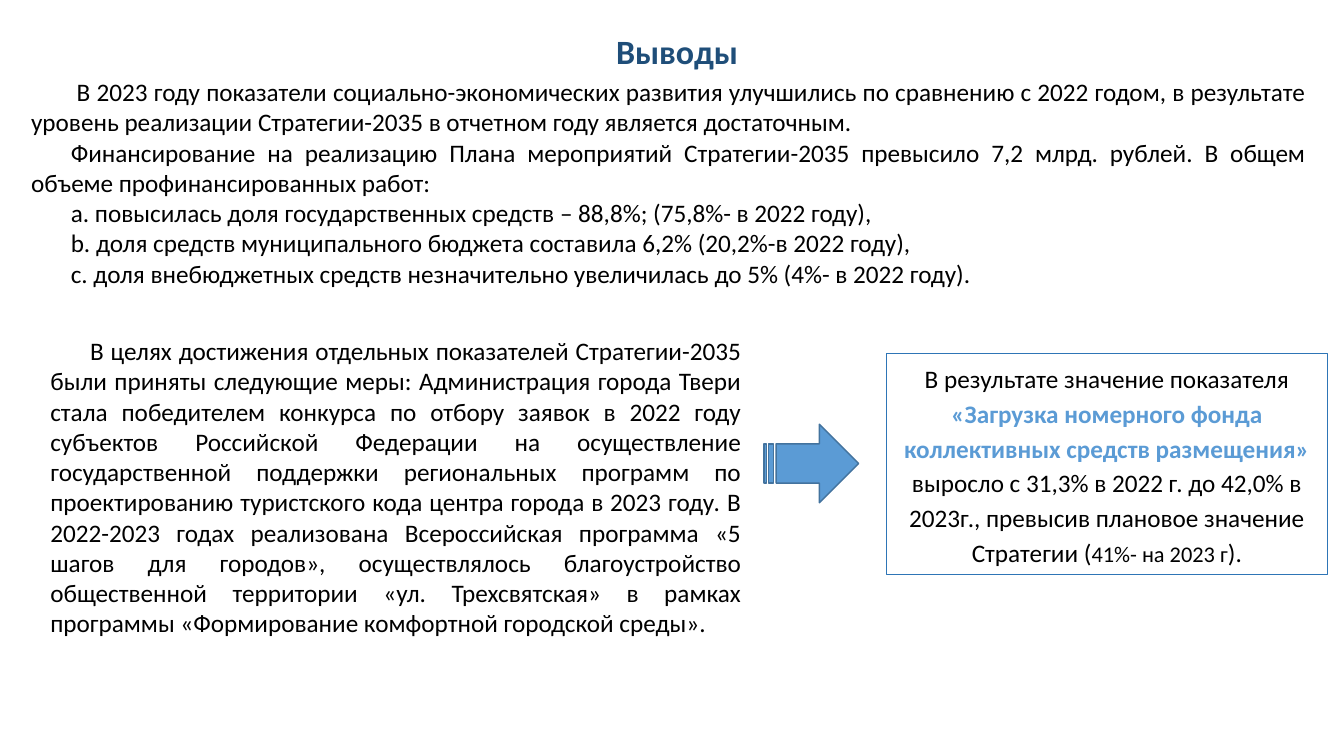
from lxml import etree
from pptx import Presentation
from pptx.dml.color import RGBColor
from pptx.enum.shapes import MSO_SHAPE
from pptx.enum.text import MSO_ANCHOR, MSO_AUTO_SIZE, PP_ALIGN
from pptx.oxml.ns import qn
from pptx.util import Cm, Pt

RECTANGLE = MSO_SHAPE.RECTANGLE
STRIPED_ARROW = MSO_SHAPE.STRIPED_RIGHT_ARROW
TOP, BOTTOM = MSO_ANCHOR.TOP, MSO_ANCHOR.BOTTOM
CENTER, JUSTIFY = PP_ALIGN.CENTER, PP_ALIGN.JUSTIFY
NO_AUTOFIT = MSO_AUTO_SIZE.NONE

COLORS = {
    "text": "000000",
    "heading": "1F4E79",
    "accent": "5B9BD5",
    "result_border": "2E75B6",
    "arrow_border": "43739E",
}
PLAIN = {"size": Pt(18), "bold": False, "color": "text"}
SMALL = {**PLAIN, "size": Pt(16)}
ACCENT = {**PLAIN, "bold": True, "color": "accent"}
HEADING = {"size": Pt(24.3), "bold": True, "color": "heading"}
SINGLE = {"space_before": Pt(0), "line_spacing": 1.0}
CENTERED = {**SINGLE, "alignment": CENTER}
JUSTIFIED = {**SINGLE, "alignment": JUSTIFY}
LOOSE = {**CENTERED, "line_spacing": 1.15}
FIRST_LINE = Cm(1)

SUMMARY = [
    "В 2023 году показатели социально-экономических развития улучшились по сравнению "
    "с 2022 годом, в результате уровень реализации Стратегии-2035 в отчетном году "
    "является достаточным.",
    "Финансирование на реализацию Плана мероприятий Стратегии-2035 превысило "
    "7,2 млрд. рублей. В общем объеме профинансированных работ:",
    "a. повысилась доля государственных средств – 88,8%; (75,8%- в 2022 году),",
    "b. доля средств муниципального бюджета составила 6,2% (20,2%-в 2022 году),",
    "c. доля внебюджетных средств незначительно увеличилась до 5% (4%- в 2022 году).",
]
MEASURES = [
    "В целях достижения отдельных показателей Стратегии-2035 были приняты следующие "
    "меры: Администрация города Твери стала победителем конкурса по отбору заявок "
    "в 2022 году субъектов Российской Федерации на осуществление государственной "
    "поддержки региональных программ по проектированию туристского кода центра города "
    "в 2023 году. В 2022-2023 годах реализована Всероссийская программа «5 шагов для "
    "городов», осуществлялось благоустройство общественной территории "
    "«ул. Трехсвятская» в рамках программы «Формирование комфортной городской среды».",
]
RESULT = [
    [("В результате значение показателя", PLAIN)],
    [
        ("«Загрузка номерного фонда коллективных средств размещения» ", ACCENT),
        ("выросло с 31,3% в 2022 г. до 42,0% в 2023г., превысив плановое значение "
         "Стратегии (", PLAIN),
        ("41%- на 2023 г", SMALL),
        (").", PLAIN),
    ],
]


def set_values(target, values):
    for attribute, value in values.items():
        setattr(target, attribute, value)


def rgb(color):
    return RGBColor.from_string(COLORS[color])


def place(part, left, top, width, height):
    set_values(part, {"left": Cm(left), "top": Cm(top),
                      "width": Cm(width), "height": Cm(height)})


def write(part, paragraphs, layout, frame_values=None):
    frame = part.text_frame
    set_values(frame, {"word_wrap": True, "auto_size": NO_AUTOFIT,
                       "vertical_anchor": TOP, **(frame_values or {})})
    for number, pieces in enumerate(paragraphs):
        paragraph = frame.add_paragraph() if number else frame.paragraphs[0]
        set_values(paragraph, layout)
        for text, style in pieces:
            run = paragraph.add_run()
            run.text = text
            set_values(run.font, {"name": "Calibri", "size": style["size"],
                                  "bold": style["bold"]})
            run.font.color.rgb = rgb(style["color"])


def indent_first_lines(part, indent):
    for paragraph in part.text_frame.paragraphs:
        properties = paragraph._p.get_or_add_pPr()
        properties.set("marL", "0")
        properties.set("indent", str(indent))
        etree.SubElement(properties, qn("a:buNone"))


def write_prose(part, texts):
    write(part, [[(text, PLAIN)] for text in texts], JUSTIFIED)
    indent_first_lines(part, FIRST_LINE)


def add_outlined_shape(slide, preset, box, border, border_width, fill=None):
    shape = slide.shapes.add_shape(preset, *map(Cm, box))
    shape.shadow.inherit = False
    if fill:
        shape.fill.solid()
        shape.fill.fore_color.rgb = rgb(fill)
    else:
        shape.fill.background()
    shape.line.color.rgb = rgb(border)
    shape.line.width = Pt(border_width)
    return shape


def main():
    deck = Presentation()
    set_values(deck, {"slide_width": Cm(33.87), "slide_height": Cm(19.05)})
    slide = deck.slides.add_slide(deck.slide_layouts[1])

    summary = slide.placeholders[1]
    place(summary, 0.53, 1.8, 32.64, 5.64)
    write_prose(summary, SUMMARY)
    summary.text_frame.paragraphs[0]._p.pPr.set("indent", str(Cm(1.15)))

    heading = slide.shapes.title
    place(heading, 3.68, 0.05, 26.34, 2.01)
    write(heading, [[("Выводы", HEADING)]], CENTERED,
          {"vertical_anchor": BOTTOM, "margin_left": Cm(0.68),
           "margin_bottom": Cm(0.26)})

    measures = slide.shapes.add_textbox(Cm(1.02), Cm(8.33), Cm(17.91), Cm(7.95))
    write_prose(measures, MEASURES)

    result = add_outlined_shape(slide, RECTANGLE, (22.33, 8.92, 11.13, 5.56),
                                "result_border", 0.75)
    write(result, RESULT, LOOSE)

    add_outlined_shape(slide, STRIPED_ARROW, (19.25, 10.69, 2.39, 1.98),
                       "arrow_border", 1, "accent")
    deck.save("out.pptx")


if __name__ == "__main__":
    main()
